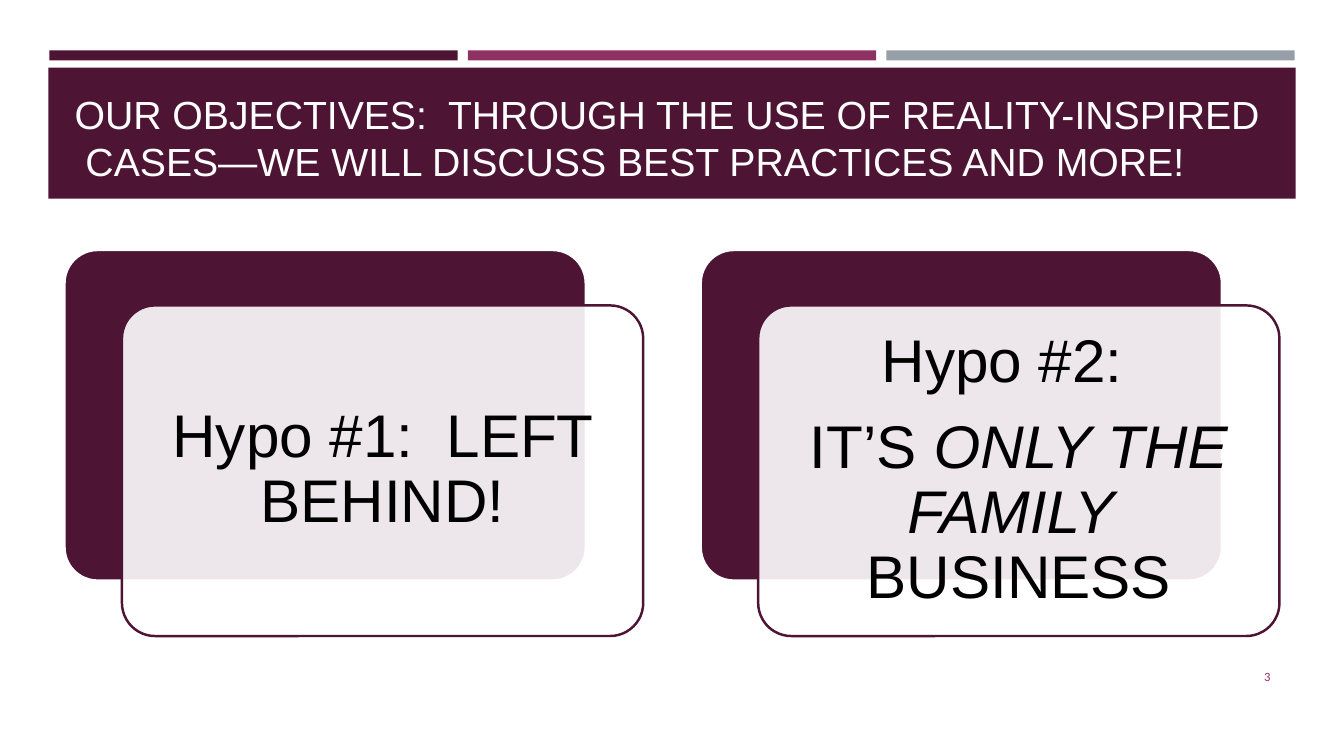
from lxml import etree
from pptx import Presentation
from pptx.dml.color import RGBColor
from pptx.enum.shapes import MSO_SHAPE as SHAPE
from pptx.enum.text import MSO_ANCHOR as ANCHOR, MSO_AUTO_SIZE as AUTO, PP_ALIGN as ALIGN
from pptx.oxml.ns import qn
from pptx.util import Pt

PX = 9144  # 100 px to the inch
PLUM = RGBColor(0x4D, 0x14, 0x34)
MAGENTA = RGBColor(0x90, 0x31, 0x63)
GRAY = RGBColor(0x96, 0x9F, 0xA7)
WHITE = RGBColor(0xFF, 0xFF, 0xFF)
TITLE_WHITE = RGBColor(0xFF, 0xFE, 0xFF)
BLACK = RGBColor(0, 0, 0)

prs = Presentation()
prs.slide_width, prs.slide_height = 1333 * PX, 750 * PX
s = prs.slides.add_slide(prs.slide_layouts[5])


def add_box(x, y, w, h, fill, line=None, kind=SHAPE.RECTANGLE):
    sp = s.shapes.add_shape(kind, x * PX, y * PX, w * PX, h * PX)
    sp.shadow.inherit = False
    sp.fill.solid()
    sp.fill.fore_color.rgb = fill
    if line is None:
        sp.line.fill.background()
    else:
        sp.line.color.rgb = line
        sp.line.width = Pt(1.75)
    if kind == SHAPE.ROUNDED_RECTANGLE:
        sp.adjustments[0] = 0.1
    return sp


def add_run(p, text, size, color, font="Arial", italic=False):
    r = p.add_run()
    r.text = text
    r.font.size, r.font.name, r.font.italic = Pt(size), font, italic
    r.font.color.rgb = color


# Header bars and title band
for i, color in enumerate((PLUM, MAGENTA, GRAY)):
    add_box(49 + 415 * i, 50, 405, 10, color)
band = add_box(48, 67, 1237, 130, PLUM)

title = s.shapes.title
band.element.addnext(title.element)
title.left, title.top, title.width, title.height = 64 * PX, 77 * PX, 1206 * PX, 111 * PX
tf = title.text_frame
tf.word_wrap, tf.auto_size, tf.vertical_anchor = True, AUTO.NONE, ANCHOR.BOTTOM
p = tf.paragraphs[0]
p.alignment = ALIGN.LEFT
add_run(p, "OUR OBJECTIVES:  THROUGH THE USE OF REALITY-INSPIRED", 28, TITLE_WHITE)
p.add_line_break()
add_run(p, " CASES—WE WILL DISCUSS BEST PRACTICES AND MORE!", 28, TITLE_WHITE)

# Each card: paragraphs of (text, italic) runs
cards = [
    [[("Hypo #1:  LEFT BEHIND!", False)]],
    [[("Hypo #2:  ", False)],
     [("IT’S ", False), ("ONLY THE FAMILY ", True), (" BUSINESS", False)]],
]
for i, paragraphs in enumerate(cards):
    x = 64 + 631 * i
    add_box(x, 248, 517, 328, PLUM, WHITE, SHAPE.ROUNDED_RECTANGLE)
    card = add_box(x + 57, 303, 517, 328, WHITE, PLUM, SHAPE.ROUNDED_RECTANGLE)
    fill_color = card.element.spPr.find(qn("a:solidFill"))[0]
    etree.SubElement(fill_color, qn("a:alpha"), val="90000")
    tf = card.text_frame
    tf.word_wrap, tf.vertical_anchor = True, ANCHOR.MIDDLE
    tf.margin_left = tf.margin_right = tf.margin_top = tf.margin_bottom = 18 * PX
    for j, runs in enumerate(paragraphs):
        p = tf.add_paragraph() if j else tf.paragraphs[0]
        p.alignment, p.line_spacing, p.space_after = ALIGN.CENTER, 0.9, Pt(15)
        for text, italic in runs:
            add_run(p, text, 43, BLACK, italic=italic)

# Slide number
number = s.shapes.add_textbox(1155 * PX, 651 * PX, 115 * PX, 40 * PX)
tf = number.text_frame
tf.word_wrap, tf.vertical_anchor = True, ANCHOR.MIDDLE
p = tf.paragraphs[0]
p.alignment, p.space_after = ALIGN.RIGHT, Pt(6)
add_run(p, "3", 9, MAGENTA, font="Calibri")

prs.save("out.pptx")
